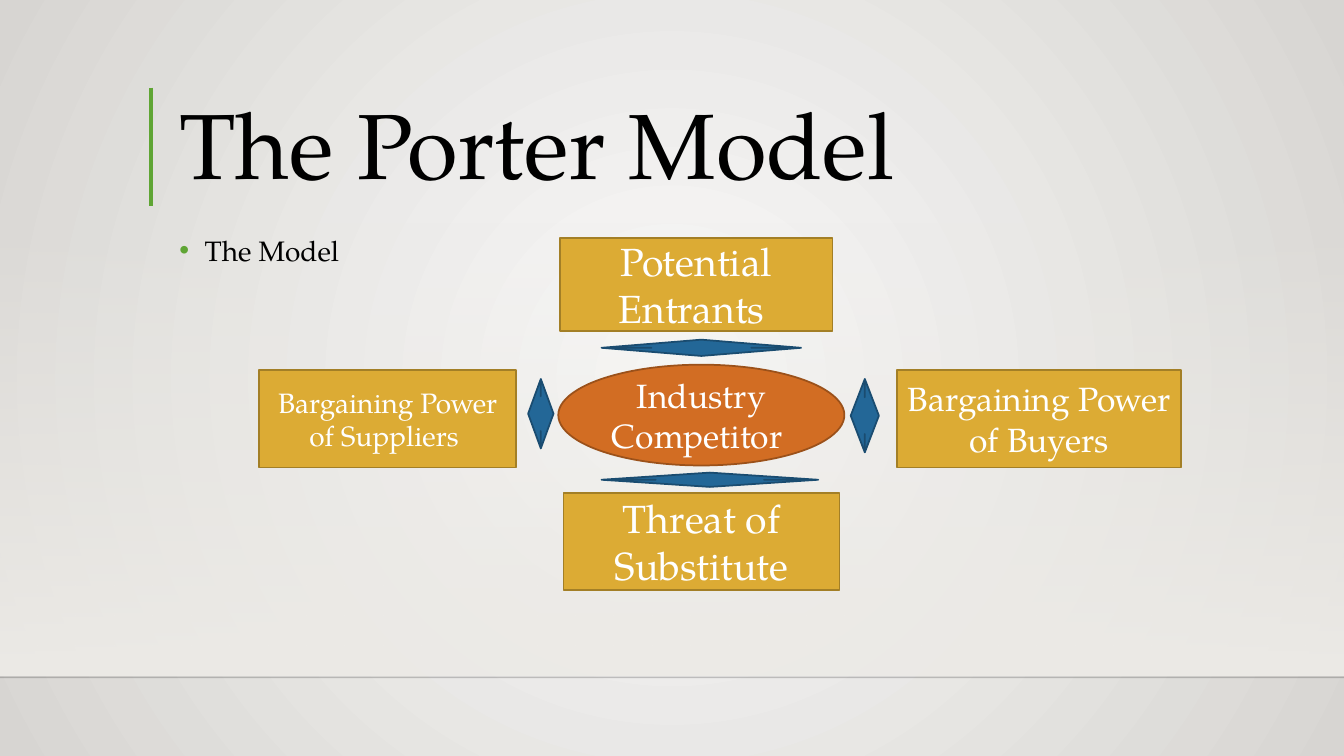
from lxml.etree import SubElement
from pptx import Presentation
from pptx.dml.color import RGBColor
from pptx.enum.shapes import MSO_CONNECTOR, MSO_SHAPE as SHAPE
from pptx.enum.text import MSO_ANCHOR as ANCHOR, PP_ALIGN as ALIGN
from pptx.oxml.ns import qn
from pptx.util import Cm, Pt

FONT = "TeX Gyre Pagella"
WIDTH, HEIGHT = 33.87, 19.05
TITLE = ("The Porter Model", 66, (4.27, 2.24, 26.44, 2.92))
BODY = ("The Model", 20, (4.27, 5.59, 26.44, 9.58))
FLOOR = (0, 5.59, WIDTH, 11.43)
GOLD, ORANGE, BLUE = ("DCAB34", "A37F26"), ("D26D23", "9B511A"), ("236797", "1A4C70")
FORCES = [
    ("Potential Entrants ", 28, SHAPE.RECTANGLE, GOLD, (14.12, 5.99, 6.86, 2.36)),
    ("Industry Competitor ", 24, SHAPE.OVAL, ORANGE, (14.07, 9.19, 7.21, 2.54)),
    ("Bargaining Power of Suppliers ", 20, SHAPE.RECTANGLE, GOLD, (6.53, 9.32, 6.48, 2.46)),
    ("Threat of Substitute", 28, SHAPE.RECTANGLE, GOLD, (14.2, 12.42, 6.96, 2.44)),
    ("Bargaining Power of Buyers", 24, SHAPE.RECTANGLE, GOLD, (22.61, 9.32, 7.16, 2.46)),
]
ARROWS = [
    (SHAPE.LEFT_RIGHT_ARROW, (13.31, 9.55, 0.64, 1.75)),
    (SHAPE.LEFT_RIGHT_ARROW, (21.44, 9.55, 0.71, 1.85)),
    (SHAPE.UP_DOWN_ARROW, (15.16, 8.56, 5.03, 0.41)),
    (SHAPE.UP_DOWN_ARROW, (15.16, 11.91, 5.46, 0.36)),
]


def rgb(color):
    return RGBColor.from_string(color)


def lengths(values):
    return [Cm(value) for value in values]


def add_alpha(parent, percent):
    color = next(parent.iter(qn("a:srgbClr")))
    SubElement(color, qn("a:alpha"), val=str(percent * 1000))


def set_gradient(fill, colors):
    fill.gradient()
    for stop, color, position in zip(fill.gradient_stops, colors, (0, 1)):
        stop.color.rgb = rgb(color)
        stop.position = position


def write(paragraph, text, size, color):
    run = paragraph.add_run()
    run.text = text
    run.font.name, run.font.size = FONT, Pt(size)
    run.font.color.rgb = rgb(color)


def add_text(slide, content, anchor, spacing):
    text, size, box = content
    frame = slide.shapes.add_textbox(*lengths(box)).text_frame
    frame.word_wrap, frame.vertical_anchor = True, anchor
    paragraph = frame.paragraphs[0]
    paragraph.line_spacing = spacing
    write(paragraph, text, size, "000000")
    return paragraph


def add_bullet(paragraph, color):
    properties = paragraph._p.get_or_add_pPr()
    properties.set("marL", str(Cm(0.64)))
    properties.set("indent", str(Cm(-0.64)))
    SubElement(SubElement(properties, qn("a:buClr")), qn("a:srgbClr"), val=color)
    SubElement(properties, qn("a:buFont"), typeface="Arial")
    SubElement(properties, qn("a:buChar"), char="•")


def add_line(slide, ends, color, width):
    line = slide.shapes.add_connector(MSO_CONNECTOR.STRAIGHT, *lengths(ends))
    line.line.color.rgb, line.line.width = rgb(color), Pt(width)
    SubElement(line._element.spPr, qn("a:effectLst"))
    return line


def add_figure(slide, kind, colors, box):
    figure = slide.shapes.add_shape(kind, *lengths(box))
    figure.shadow.inherit = False
    figure.fill.solid()
    figure.fill.fore_color.rgb = rgb(colors[0])
    figure.line.color.rgb, figure.line.width = rgb(colors[1]), Pt(1.25)
    return figure


def add_backdrop(slide):
    background = slide.background.fill
    set_gradient(background, ("FAFAF9", "D7D5D2"))
    gradient = next(slide._element.iter(qn("a:gradFill")))
    gradient.remove(gradient.find(qn("a:lin")))
    radial = SubElement(gradient, qn("a:path"), path="circle")
    SubElement(radial, qn("a:fillToRect"), l="50000", t="50000", r="50000", b="50000")

    floor = slide.shapes.add_shape(SHAPE.RECTANGLE, *lengths(FLOOR))
    floor.shadow.inherit = False
    floor.line.fill.background()
    set_gradient(floor.fill, ("EDEBE7", "EDEBE7"))
    floor.fill.gradient_angle = 270
    add_alpha(floor._element.spPr, 0)
    horizon = add_line(slide, (0, 17.07, WIDTH, 17.07), "000001", 1)
    add_alpha(horizon._element.spPr, 20)
    add_line(slide, (3.81, 2.21, 3.81, 5.18), "5FA534", 3)


def main():
    """Build the five forces slide."""
    deck = Presentation()
    deck.slide_width, deck.slide_height = lengths((WIDTH, HEIGHT))
    slide = deck.slides.add_slide(deck.slide_layouts[6])
    add_backdrop(slide)
    add_text(slide, TITLE, ANCHOR.BOTTOM, 0.9)
    add_bullet(add_text(slide, BODY, ANCHOR.TOP, 1.2), "5FA534")
    for text, size, kind, colors, box in FORCES:
        frame = add_figure(slide, kind, colors, box).text_frame
        frame.word_wrap, frame.vertical_anchor = True, ANCHOR.MIDDLE
        frame.paragraphs[0].alignment = ALIGN.CENTER
        write(frame.paragraphs[0], text, size, "FFFFFF")
    for kind, box in ARROWS:
        add_figure(slide, kind, BLUE, box)
    deck.save("out.pptx")


if __name__ == "__main__":
    main()
